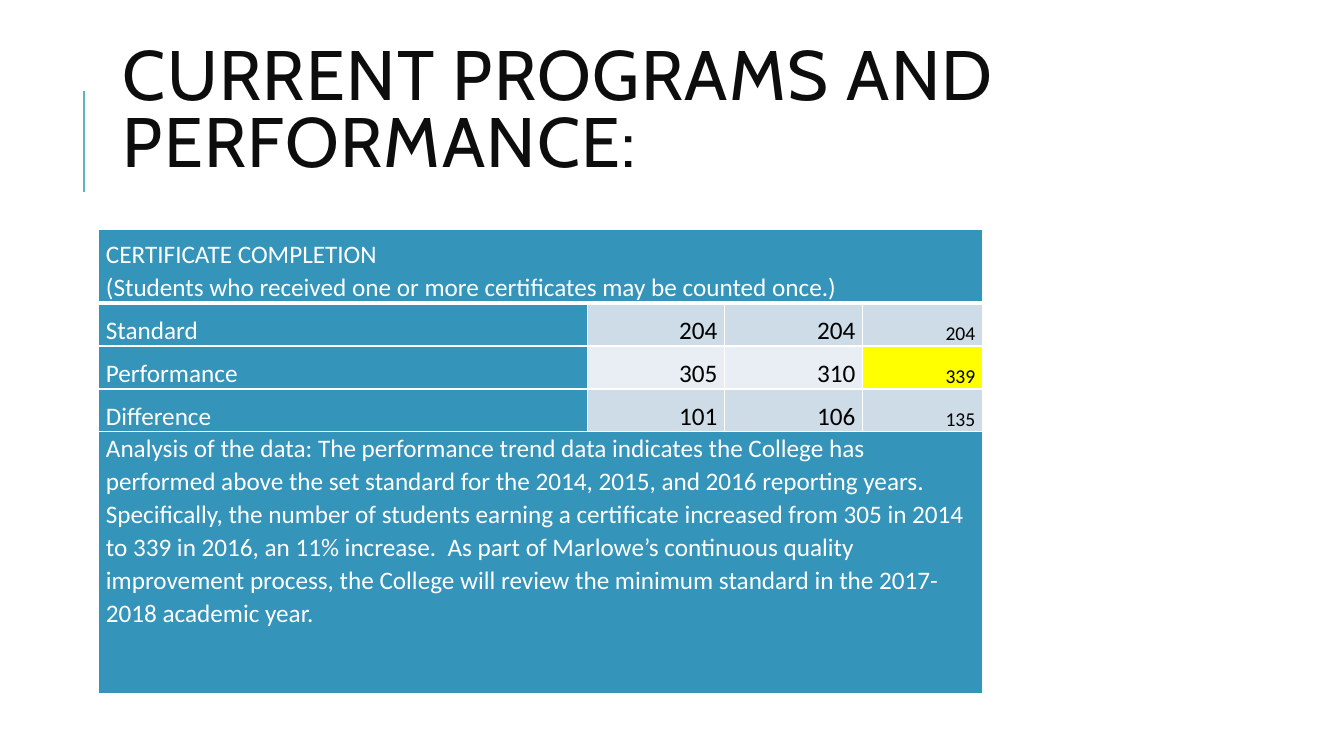
from dataclasses import dataclass

from lxml.etree import SubElement
from pptx import Presentation
from pptx.dml.color import RGBColor
from pptx.enum.shapes import MSO_CONNECTOR
from pptx.enum.text import MSO_ANCHOR, MSO_AUTO_SIZE, PP_ALIGN
from pptx.oxml import parse_xml
from pptx.oxml.ns import nsdecls, qn
from pptx.util import Cm, Pt


@dataclass(frozen=True)
class Theme:
    heading_font: str = "Cabin"
    body_font: str = "Calibri"
    heading_size: float = 50
    body_size: float = 18
    small_size: float = 14
    heading: str = "0D0D0D"
    ink: str = "000000"
    white: str = "FFFFFF"
    accent: str = "58B6C0"
    label_fill: str = "3494BA"
    bands: tuple = ("CEDCE7", "E8EEF3")
    highlight: str = "FFFF00"


def write(frame, text, font, size, color, align=PP_ALIGN.LEFT, leading=1.07, tracking=0):
    frame.text = text
    for paragraph in frame.paragraphs:
        paragraph.alignment = align
        paragraph.line_spacing = leading
        paragraph.space_before = paragraph.space_after = Pt(0)
        for run in paragraph.runs:
            run.font.name = font
            run.font.size = Pt(size)
            run.font.bold = False
            run.font.color.rgb = RGBColor.from_string(color)
            if tracking:
                run.font._element.set("spc", str(tracking * 100))


class SlideBuilder:
    def __init__(self, slide, theme):
        self.slide = slide
        self.theme = theme

    def title(self, text, left, top, width, height):
        heading = self.slide.shapes.title
        heading.left, heading.top = Cm(left), Cm(top)
        heading.width, heading.height = Cm(width), Cm(height)
        frame = heading.text_frame
        frame.word_wrap = True
        frame.auto_size = MSO_AUTO_SIZE.NONE
        frame.vertical_anchor = MSO_ANCHOR.MIDDLE
        frame.margin_bottom = Cm(1.83)
        write(frame, text, self.theme.heading_font, self.theme.heading_size,
              self.theme.heading, leading=0.8, tracking=1)

    def rule(self, x, start, end):
        accent = self.slide.shapes.add_connector(
            MSO_CONNECTOR.STRAIGHT, Cm(x), Cm(start), Cm(x), Cm(end))
        accent.line.color.rgb = RGBColor.from_string(self.theme.accent)
        accent.line.width = Pt(1.5)
        SubElement(accent._element.spPr, qn("a:effectLst"))

    def table(self, left, top, widths, heights):
        grid = self.slide.shapes.add_table(
            len(heights), len(widths), Cm(left), Cm(top),
            Cm(sum(widths)), Cm(sum(heights))).table
        for column, width in zip(grid.columns, widths):
            column.width = Cm(width)
        for row, height in zip(grid.rows, heights):
            row.height = Cm(height)
        return grid

    def cell(self, cell, text, fill, color, size=None, align=PP_ALIGN.LEFT,
             anchor=MSO_ANCHOR.BOTTOM):
        cell.margin_left = cell.margin_right = Cm(0.18)
        cell.margin_top = cell.margin_bottom = 0
        cell.vertical_anchor = anchor
        cell.fill.solid()
        cell.fill.fore_color.rgb = RGBColor.from_string(fill)
        write(cell.text_frame, text, self.theme.body_font,
              size or self.theme.body_size, color, align)

    def borders(self, cell, top=1, bottom=1):
        weights = {"lnL": 1, "lnR": 1, "lnT": top, "lnB": bottom}
        properties = cell._tc.get_or_add_tcPr()
        for place, (edge, weight) in enumerate(weights.items()):
            properties.insert(place, parse_xml(
                f'<a:{edge} {nsdecls("a")} w="{Pt(weight)}"><a:solidFill>'
                f'<a:srgbClr val="{self.theme.white}"/></a:solidFill></a:{edge}>'))


CERTIFICATES = [
    ("Standard", 204, 204, 204),
    ("Performance", 305, 310, 339),
    ("Difference", 101, 106, 135),
]
HEADER = ("CERTIFICATE COMPLETION\n"
          "(Students who received one or more certificates may be counted once.)")
ANALYSIS = (
    "Analysis of the data: The performance trend data indicates the College has "
    "performed above the set standard for the 2014, 2015, and 2016 reporting years.  "
    "Specifically, the number of students earning a certificate increased from 305 in "
    "2014 to 339 in 2016, an 11% increase.  As part of Marlowe’s continuous quality "
    "improvement process, the College will review the minimum standard in the "
    "2017-2018 academic year."
)


def main():
    theme = Theme()
    deck = Presentation()
    deck.slide_width, deck.slide_height = Cm(33.87), Cm(19.05)
    builder = SlideBuilder(deck.slides.add_slide(deck.slide_layouts[5]), theme)

    builder.rule(2.11, 4.83, 2.29)
    builder.title("CURRENT PROGRAMS AND PERFORMANCE:", 2.84, 1.63, 27, 4.17)

    widths = [12.32, 3.45, 3.48, 3.02]
    heights = [1.85] + [1.08] * len(CERTIFICATES) + [6.6]
    completion = builder.table(2.49, 5.79, widths, heights)
    last_row, last_column = len(heights) - 1, len(widths) - 1

    for row in (0, last_row):
        completion.cell(row, 0).merge(completion.cell(row, last_column))
    builder.cell(completion.cell(0, 0), HEADER, theme.label_fill, theme.white)
    builder.cell(completion.cell(last_row, 0), ANALYSIS, theme.label_fill, theme.white,
                 anchor=MSO_ANCHOR.TOP)

    for row, (label, *counts) in enumerate(CERTIFICATES, 1):
        builder.cell(completion.cell(row, 0), label, theme.label_fill, theme.white)
        for column, count in enumerate(counts, 1):
            latest = column == last_column
            highlighted = latest and label == "Performance"
            builder.cell(
                completion.cell(row, column), str(count),
                theme.highlight if highlighted else theme.bands[(row - 1) % 2],
                theme.ink, theme.small_size if latest else theme.body_size,
                PP_ALIGN.RIGHT)

    for row in range(len(heights)):
        for column in range(len(widths)):
            builder.borders(completion.cell(row, column),
                            top=3 if row == 1 else 1, bottom=3 if row == 0 else 1)

    deck.save("out.pptx")


if __name__ == "__main__":
    main()
